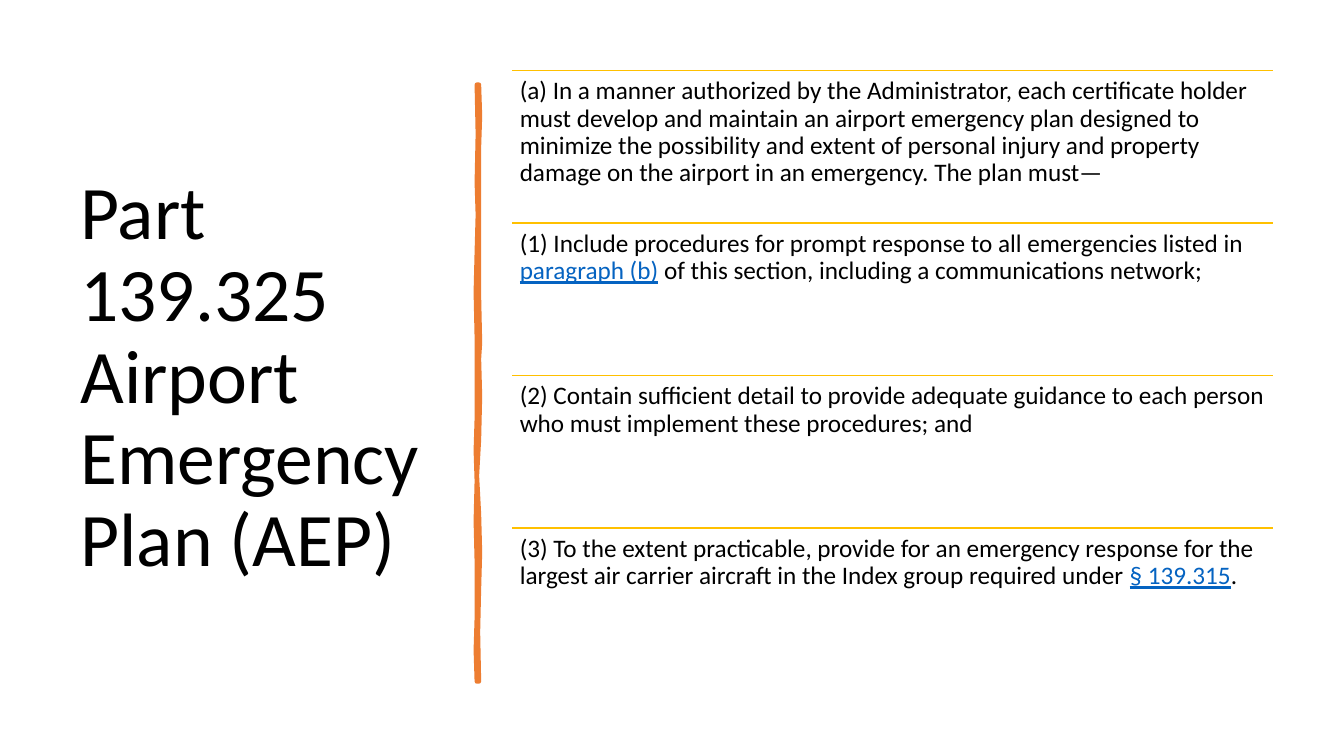
from dataclasses import dataclass

from lxml.etree import SubElement
from pptx import Presentation
from pptx.dml.color import RGBColor
from pptx.enum.shapes import MSO_CONNECTOR as Connector
from pptx.enum.text import MSO_ANCHOR as Anchor
from pptx.oxml.ns import qn
from pptx.util import Inches, Pt


@dataclass(frozen=True)
class Theme:
    font: str = "Calibri"
    title_size: int = 54
    body_size: int = 18
    line_spacing: float = 0.9
    title_inset: float = 7.2
    body_inset: float = 5.4
    text: str = "000000"
    link: str = "0563C1"
    rule: str = "FFC000"
    brush: str = "ED7D31"


TITLE = "Part 139.325 Airport Emergency Plan (AEP)"

# Each requirement is a list of (words, is_link) spans.
REQUIREMENTS = [
    [("(a) In a manner authorized by the Administrator, each certificate holder "
      "must develop and maintain an airport emergency plan designed to minimize "
      "the possibility and extent of personal injury and property damage on the "
      "airport in an emergency. The plan must—", False)],
    [("(1) Include procedures for prompt response to all emergencies listed in ", False),
     ("paragraph (b)", True),
     (" of this section, including a communications network;", False)],
    [("(2) Contain sufficient detail to provide adequate guidance to each person "
      "who must implement these procedures; and", False)],
    [("(3) To the extent practicable, provide for an emergency response for the "
      "largest air carrier aircraft in the Index group required under ", False),
     ("§ 139.315", True),
     (".", False)],
]

LIST_LEFT, LIST_WIDTH = 5.08, 7.55
FIRST_RULE, LAST_RULE = 0.7, 5.24
ROW_HEIGHT = (LAST_RULE - FIRST_RULE) / (len(REQUIREMENTS) - 1)

# Brush stroke outline: down the right edge, then up the left one.
BRUSH_OUTLINE = [
    (4.75, 0.84), (4.76, 1.15), (4.75, 1.46), (4.75, 2.26), (4.75, 2.94),
    (4.76, 3.4), (4.75, 3.56), (4.76, 3.93), (4.75, 4.36), (4.73, 4.72),
    (4.75, 5.1), (4.76, 5.48), (4.75, 5.84), (4.74, 6.27), (4.75, 6.76),
    (4.73, 6.76), (4.72, 6.45), (4.73, 6.13), (4.73, 5.57), (4.72, 5.17),
    (4.73, 4.77), (4.72, 4.47), (4.73, 4.15), (4.73, 3.35), (4.72, 2.9),
    (4.73, 2.5), (4.74, 2.13), (4.73, 1.81), (4.74, 1.33), (4.73, 0.84),
]


class SlideBuilder:
    def __init__(self, slide, theme):
        self.shapes = slide.shapes
        self.theme = theme

    def add_text(self, spans, left, top, width, height, size, inset,
                 anchor=Anchor.TOP):
        """Add a one-paragraph text box from (words, is_link) spans."""
        box = self.shapes.add_textbox(*map(Inches, (left, top, width, height)))
        frame = box.text_frame
        frame.word_wrap = True
        frame.vertical_anchor = anchor
        frame.margin_left = frame.margin_right = Pt(inset)
        frame.margin_top = frame.margin_bottom = Pt(inset)
        para = frame.paragraphs[0]
        para.line_spacing = self.theme.line_spacing
        for words, is_link in spans:
            span = para.add_run()
            span.text = words
            span.font.name = self.theme.font
            span.font.size = Pt(size)
            span.font.underline = is_link
            color = self.theme.link if is_link else self.theme.text
            span.font.color.rgb = RGBColor.from_string(color)

    def add_rule(self, left, top, width):
        rule = self.shapes.add_connector(
            Connector.STRAIGHT, *map(Inches, (left, top, left + width, top)))
        rule.line.color.rgb = RGBColor.from_string(self.theme.rule)
        rule.line.width = Pt(1)
        SubElement(rule._element.spPr, qn("a:effectLst"))

    def add_brush_stroke(self, outline):
        start, *points = [(Inches(x), Inches(y)) for x, y in outline]
        builder = self.shapes.build_freeform(*start)
        builder.add_line_segments(points, close=True)
        stroke = builder.convert_to_shape()
        color = RGBColor.from_string(self.theme.brush)
        stroke.shadow.inherit = False
        stroke.fill.solid()
        stroke.fill.fore_color.rgb = color
        stroke.line.color.rgb = color
        stroke.line.width = Pt(3.25)


def main():
    deck = Presentation()
    deck.slide_width, deck.slide_height = Inches(13.33), Inches(7.5)
    theme = Theme()
    page = SlideBuilder(deck.slides.add_slide(deck.slide_layouts[6]), theme)

    page.add_text([(TITLE, False)], 0.7, 0.7, 3.74, 6.11, theme.title_size,
                  theme.title_inset, Anchor.MIDDLE)
    page.add_brush_stroke(BRUSH_OUTLINE)
    for row, spans in enumerate(REQUIREMENTS):
        top = FIRST_RULE + row * ROW_HEIGHT
        page.add_rule(LIST_LEFT, top, LIST_WIDTH)
        page.add_text(spans, LIST_LEFT, top, LIST_WIDTH, ROW_HEIGHT,
                      theme.body_size, theme.body_inset)

    deck.save("out.pptx")


if __name__ == "__main__":
    main()
